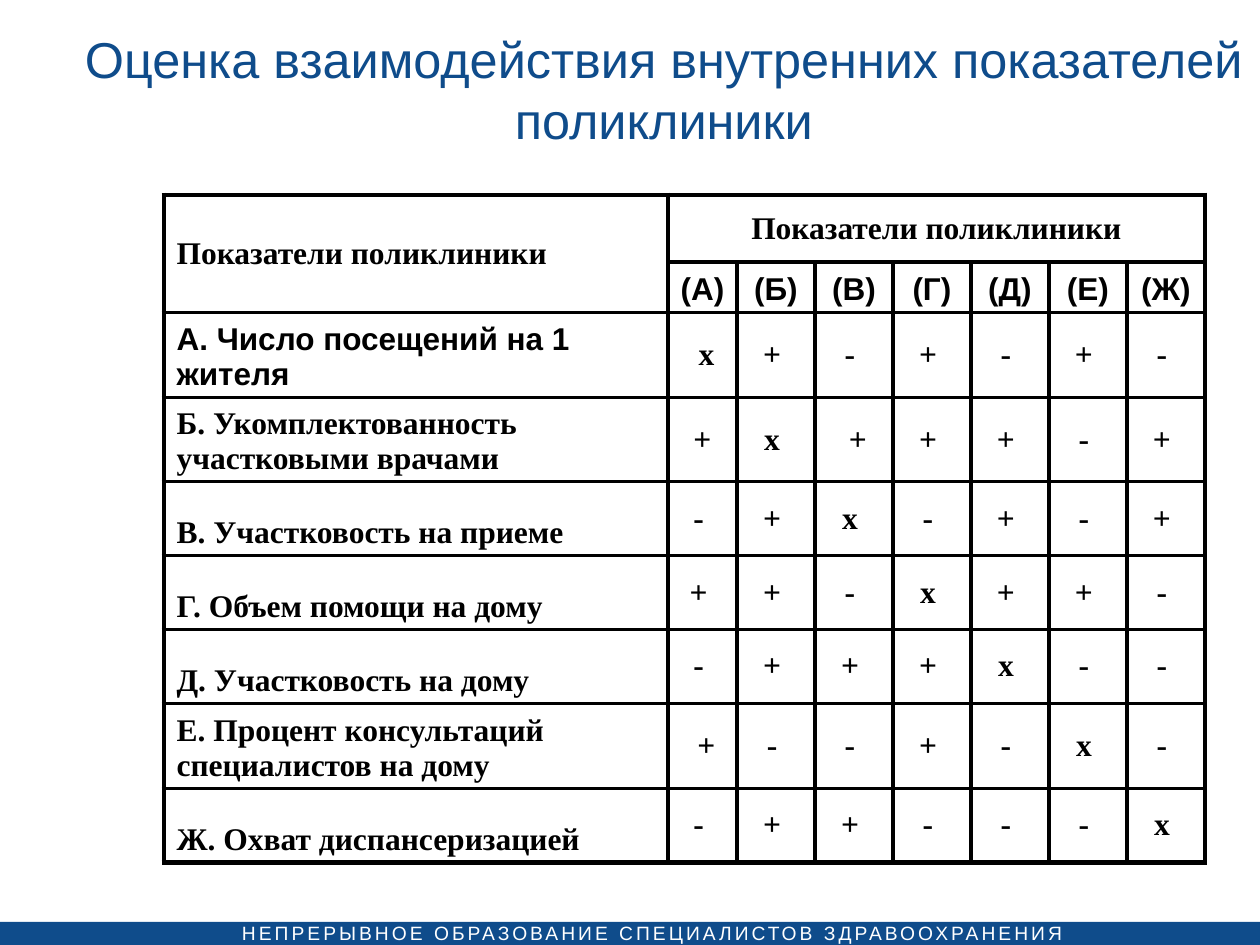
from lxml import etree
from pptx import Presentation
from pptx.dml.color import RGBColor
from pptx.enum.shapes import MSO_SHAPE
from pptx.enum.text import MSO_ANCHOR, PP_ALIGN
from pptx.oxml.ns import qn
from pptx.util import Pt

LEFT, CENTER = PP_ALIGN.LEFT, PP_ALIGN.CENTER
MIDDLE, BOTTOM = MSO_ANCHOR.MIDDLE, MSO_ANCHOR.BOTTOM
RECT = MSO_SHAPE.RECTANGLE
SANS, SERIF = "Arial", "Times New Roman"
COLORS = {"blue": "0F4C8B", "white": "FFFFFF", "black": "000000"}
NBSP = chr(160)

TITLE = "Оценка взаимодействия внутренних показателей поликлиники"
FOOTER = "НЕПРЕРЫВНОЕ ОБРАЗОВАНИЕ СПЕЦИАЛИСТОВ ЗДРАВООХРАНЕНИЯ"
HEAD = "Показатели поликлиники"
LETTERS = "АБВГДЕЖ"
ROWS = [  # label, signs by column, row height
    ("А. Число посещений на 1 жителя", "х+-+-+-", 85),
    ("Б. Укомплектованность участковыми врачами", "+х+++-+", 84),
    ("В. Участковость на приеме", "-+х-+-+", 74),
    ("Г. Объем помощи на дому", "++-х++-", 74),
    ("Д. Участковость на дому", "-+++х--", 74),
    ("Е. Процент консультаций специалистов на дому", "+--+-х-", 85),
    ("Ж. Охват диспансеризацией", "-++---х", 74),
]
LEADING = {"АА", "БВ", "ЕА"}  # sign follows its hard space
BARE = {"БА"}  # sign without a hard space
WIDTHS = [504, 69] + [78] * 6
HEIGHTS = [67, 47] + [row[2] for row in ROWS]
THIN, THICK = 2.25, 3


def px(n):
    return round(n * 914400 / 126)


def box(*sides):
    return [px(n) for n in sides]


def write(frame, text, size, font, color, bold=False, align=LEFT):
    para = frame.paragraphs[0]
    para.alignment = align
    run = para.add_run()
    run.text = text
    style = {"size": Pt(size), "name": font, "bold": bold}
    for key, value in style.items():
        setattr(run.font, key, value)
    run.font.color.rgb = RGBColor.from_string(COLORS[color])
    return run


def border(cell, widths):
    props = cell._tc.get_or_add_tcPr()
    for i, (side, width) in enumerate(widths.items()):
        line = etree.Element(qn(f"a:ln{side}"), w=str(Pt(width)),
                             cap="flat", cmpd="sng", algn="ctr")
        fill = etree.SubElement(line, qn("a:solidFill"))
        etree.SubElement(fill, qn("a:srgbClr"), val=COLORS["black"])
        etree.SubElement(line, qn("a:prstDash"), val="solid")
        props.insert(i, line)


def sign(row, col):
    mark = ROWS[row][1][col]
    key = LETTERS[row] + LETTERS[col]
    if key in BARE:
        return mark
    return NBSP + mark if key in LEADING else mark + NBSP


def content(row, col):
    """Give the text, font, alignment and anchor of a cell."""
    if row == 0:
        return HEAD, SERIF, CENTER if col else LEFT, MIDDLE
    if row == 1:
        return f"({LETTERS[col - 1]})", SANS, CENTER, BOTTOM
    if col == 0:
        return ROWS[row - 2][0], SANS if row == 2 else SERIF, LEFT, BOTTOM
    return sign(row - 2, col - 1), SERIF, CENTER, MIDDLE


def add_grid(slide):
    rows, cols = len(HEIGHTS), len(WIDTHS)
    place = box(164, 195, sum(WIDTHS), sum(HEIGHTS))
    table = slide.shapes.add_table(rows, cols, *place).table
    table.first_row = table.horz_banding = False
    for col, width in zip(table.columns, WIDTHS):
        col.width = px(width)
    for row, height in zip(table.rows, HEIGHTS):
        row.height = px(height)
    table.cell(0, 0).merge(table.cell(1, 0))
    table.cell(0, 1).merge(table.cell(0, cols - 1))
    for r in range(rows):
        for c in range(cols):
            cell = table.cell(r, c)
            cell.fill.background()
            if cell.is_spanned:
                continue
            text, font, align, anchor = content(r, c)
            cell.vertical_anchor = anchor
            if anchor == BOTTOM:
                cell.margin_top, cell.margin_bottom = box(3, 5)
            write(cell.text_frame, text, 18, font, "black", True, align)
            right = c + (cell.span_width if cell.is_merge_origin else 1)
            edges = {"L": c == 0, "R": right == cols,
                     "T": r == 0, "B": r == rows - 1}
            border(cell, {k: THICK if v else THIN for k, v in edges.items()})


def add_footer(slide):
    bar = slide.shapes.add_shape(RECT, *box(-5, 922, 1265, 28))
    bar.shadow.inherit = False
    bar.fill.solid()
    bar.fill.fore_color.rgb = RGBColor.from_string(COLORS["blue"])
    bar.line.fill.background()
    frame = slide.shapes.add_textbox(*box(242, 921, 835, 24)).text_frame
    for side in ("left", "top", "right", "bottom"):
        setattr(frame, f"margin_{side}", 0)
    run = write(frame, FOOTER, 11, SANS, "white")
    run.font._element.set("spc", "170")


def main():
    deck = Presentation()
    deck.slide_width, deck.slide_height = box(1260, 945)
    slide = deck.slides.add_slide(deck.slide_layouts[5])
    add_footer(slide)
    title = slide.shapes.title
    title.left, title.top, title.width, title.height = box(71, 26, 1186, 126)
    title.text_frame.vertical_anchor = MIDDLE
    write(title.text_frame, TITLE, 28.8, SANS, "blue", align=CENTER)
    add_grid(slide)
    deck.save("out.pptx")


if __name__ == "__main__":
    main()
